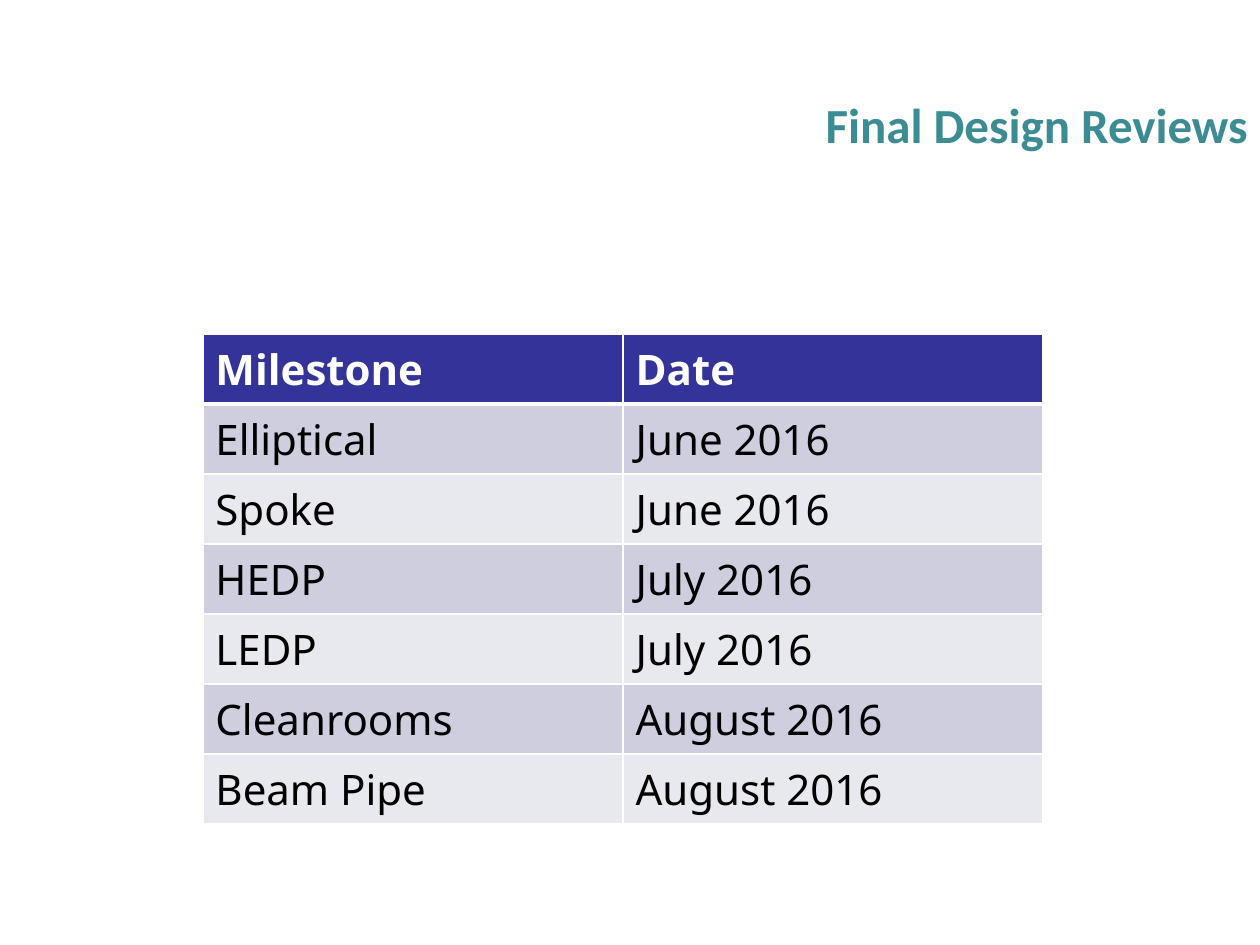
from lxml import etree
from pptx import Presentation
from pptx.dml.color import RGBColor
from pptx.enum import text
from pptx.oxml import ns
from pptx.util import Inches, Pt

COLORS = {
    "title": "3C8C93",
    "header": "333399",
    "odd_row": "CECEDE",
    "even_row": "E8E8EF",
    "border": "FFFFFF",
    "header_text": "FFFFFF",
    "body_text": "000000",
}

REVIEWS = [
    ("Milestone", "Date"),
    ("Elliptical", "June 2016"),
    ("Spoke", "June 2016"),
    ("HEDP", "July 2016"),
    ("LEDP", "July 2016"),
    ("Cleanrooms", "August 2016"),
    ("Beam Pipe", "August 2016"),
]


def style_font(font, name, size, color, bold):
    font.name = name
    font.size = Pt(size)
    font.bold = bold
    font.color.rgb = RGBColor.from_string(COLORS[color])


def add_borders(cell, widths):
    properties = cell._tc.get_or_add_tcPr()
    for side, width in widths.items():
        line = etree.SubElement(properties, ns.qn(f"a:ln{side}"), w=str(Pt(width)))
        fill = etree.SubElement(line, ns.qn("a:solidFill"))
        etree.SubElement(fill, ns.qn("a:srgbClr"), val=COLORS["border"])


def add_title(slide, left, top, width, height):
    title = slide.shapes.add_textbox(left, top, width, height)
    frame = title.text_frame
    frame.word_wrap = True
    frame.vertical_anchor = text.MSO_ANCHOR.MIDDLE
    frame.text = "Final Design Reviews"
    heading = frame.paragraphs[0]
    heading.alignment = text.PP_ALIGN.RIGHT
    style_font(heading.runs[0].font, "Calibri", 28, "title", True)


def add_review_table(slide, left, top, width, height):
    reviews = slide.shapes.add_table(
        len(REVIEWS), len(REVIEWS[0]), left, top, width, height
    ).table
    for row_index, review in enumerate(REVIEWS):
        is_header = row_index == 0
        if is_header:
            fill_color = "header"
        else:
            fill_color = "odd_row" if row_index % 2 else "even_row"
        text_color = "header_text" if is_header else "body_text"
        top_width = 3 if row_index == 1 else 1
        bottom_width = 3 if is_header else 1
        for column_index, value in enumerate(review):
            cell = reviews.cell(row_index, column_index)
            add_borders(cell, {"L": 1, "R": 1, "T": top_width, "B": bottom_width})
            cell.fill.solid()
            cell.fill.fore_color.rgb = RGBColor.from_string(COLORS[fill_color])
            cell.text_frame.text = value
            run = cell.text_frame.paragraphs[0].runs[0]
            style_font(run.font, "Noto Sans", 24, text_color, is_header)


def main():
    deck = Presentation()
    deck.slide_width = Inches(10)
    deck.slide_height = Inches(7.5)
    slide = deck.slides.add_slide(deck.slide_layouts[6])
    add_title(slide, Inches(0), Inches(0.36), deck.slide_width, Inches(1.25))
    add_review_table(slide, Inches(1.61), Inches(2.65), Inches(6.67), Inches(3.89))
    deck.save("out.pptx")


if __name__ == "__main__":
    main()
